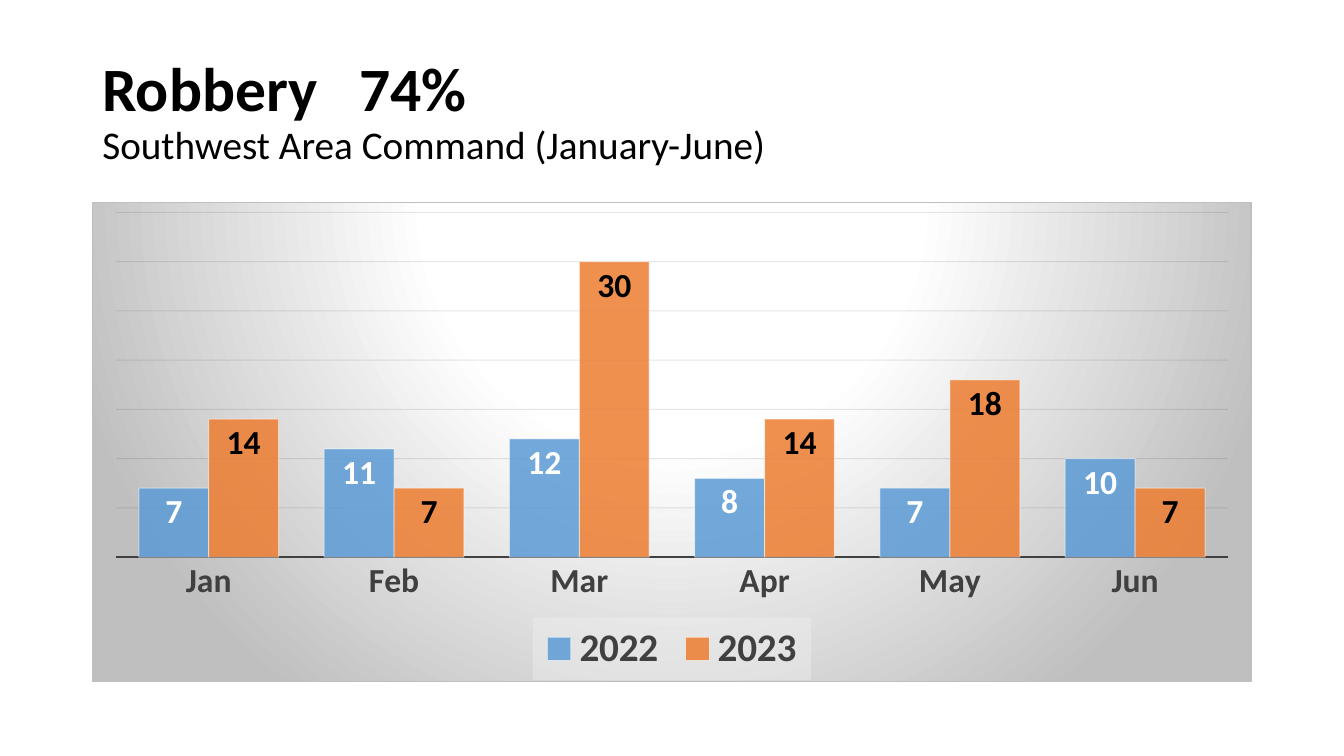
import pptx
import pptx.chart.data
import pptx.dml.color
import pptx.enum.chart
import pptx.enum.text
import pptx.oxml
import pptx.oxml.ns
import pptx.util
from pptx.util import Cm, Pt

TITLE = ("Robbery\t74%", 44, True)
SUBTITLE = ("Southwest Area Command (January-June)", 28, False)
MONTHS = ["Jan", "Feb", "Mar", "Apr", "May", "Jun"]
SERIES = [
    ("2022", [7, 11, 12, 8, 7, 10], "blue", "white"),
    ("2023", [14, 7, 30, 14, 18, 7], "orange", "black"),
]
COLORS = {
    "black": "000000", "white": "FFFFFF", "blue": "5B9BD5", "orange": "ED7D31",
    "text": "404040", "grid": "0D0D0D", "edge": "BFBFBF", "legend": "F2F2F2",
}
FONT = "Calibri"
LEFT, WIDTH = Cm(2.33), Cm(29.21)
TITLE_TOP, TITLE_HEIGHT = Cm(1.01), Cm(3.68)
CHART_TOP, CHART_HEIGHT = Cm(5.1), Cm(12.09)
TAB_STOP = Cm(6.47)
PLOT_BOX = (0.02, 0.02, 0.96, 0.72)
LEGEND_BOX = (0.38, 0.87, 0.24, 0.13)


def color(name):
    return pptx.dml.color.RGBColor.from_string(COLORS[name])


def style_font(font, size, bold, color_name):
    font.name, font.size, font.bold = FONT, Pt(size), bold
    font.color.rgb = color(color_name)


def style_line(line, color_name, width):
    line.color.rgb = color(color_name)
    line.width = Pt(width)


def set_alpha(properties, percent):
    for element in properties.iter(pptx.oxml.ns.qn("a:srgbClr")):
        pptx.oxml.ns.qn("a:alpha")
        element.append(xml(f'<a:alpha {{ns}} val="{percent * 1000}"/>'))


def xml(text):
    return pptx.oxml.parse_xml(text.replace("{ns}", pptx.oxml.ns.nsdecls("a", "c")))


def layout(box, inner=False):
    target = '<c:layoutTarget val="inner"/>' if inner else ""
    modes = "".join(f'<c:{axis}Mode val="edge"/>' for axis in "xy")
    sizes = "".join(f'<c:{key} val="{value}"/>' for key, value in zip("xywh", box))
    return xml(f"<c:layout {{ns}}><c:manualLayout>{target}{modes}{sizes}"
               "</c:manualLayout></c:layout>")


def remove_layout(parent):
    for element in parent.findall(pptx.oxml.ns.qn("c:layout")):
        parent.remove(element)


def add_title(slide):
    frame = slide.shapes.add_textbox(LEFT, TITLE_TOP, WIDTH, TITLE_HEIGHT).text_frame
    frame.word_wrap = True
    frame.vertical_anchor = pptx.enum.text.MSO_ANCHOR.MIDDLE
    paragraph = frame.paragraphs[0]
    paragraph.line_spacing = 0.9
    paragraph._p.get_or_add_pPr().append(
        xml(f'<a:tabLst {{ns}}><a:tab pos="{TAB_STOP}" algn="l"/></a:tabLst>'))
    for index, (text, size, bold) in enumerate((TITLE, SUBTITLE)):
        if index:
            paragraph.add_line_break()
        run = paragraph.add_run()
        run.text = text
        style_font(run.font, size, bold, "black")


def style_series(series, fill_name, label_name):
    series.format.fill.solid()
    series.format.fill.fore_color.rgb = color(fill_name)
    set_alpha(series.format.fill._xPr, 85)
    style_line(series.format.line, "white", 0.75)
    set_alpha(series.format.line._ln, 50)
    labels = series.data_labels
    labels.show_value = True
    labels.position = pptx.enum.chart.XL_LABEL_POSITION.INSIDE_END
    style_font(labels.font, 24, True, label_name)


def style_axes(chart):
    months, values = chart.category_axis, chart.value_axis
    months.major_tick_mark = pptx.enum.chart.XL_TICK_MARK.NONE
    style_font(months.tick_labels.font, 24, True, "text")
    style_line(months.format.line, "text", 1.5)
    values.minimum_scale, values.maximum_scale, values.major_unit = 0, 35, 5
    values.has_major_gridlines = True
    grid = values.major_gridlines.format.line
    style_line(grid, "grid", 0.75)
    set_alpha(grid._ln, 10)
    values.visible = False


def style_legend(chart):
    chart.has_legend = True
    legend = chart.legend
    legend.position = pptx.enum.chart.XL_LEGEND_POSITION.BOTTOM
    legend.include_in_layout = False
    style_font(legend.font, 28, True, "text")
    element = legend._element
    remove_layout(element)
    element.find(pptx.oxml.ns.qn("c:legendPos")).addnext(layout(LEGEND_BOX))
    element.find(pptx.oxml.ns.qn("c:overlay")).addnext(xml(
        f'<c:spPr {{ns}}><a:solidFill><a:srgbClr val="{COLORS["legend"]}">'
        '<a:alpha val="39000"/></a:srgbClr></a:solidFill></c:spPr>'))


def style_background(chart):
    stops = "".join(
        f'<a:gs pos="{position * 1000}"><a:srgbClr val="{COLORS[name]}"/></a:gs>'
        for position, name in ((0, "white"), (39, "white"), (100, "edge")))
    chart._chartSpace.chart.addnext(xml(
        f'<c:spPr {{ns}}><a:gradFill><a:gsLst>{stops}</a:gsLst><a:path path="circle">'
        '<a:fillToRect l="50000" t="-80000" r="50000" b="180000"/></a:path></a:gradFill>'
        f'<a:ln w="{Pt(0.75)}"><a:solidFill><a:srgbClr val="{COLORS["edge"]}"/>'
        '</a:solidFill></a:ln></c:spPr>'))


def add_robbery_chart(slide):
    data = pptx.chart.data.CategoryChartData()
    data.categories = MONTHS
    for name, values, *_ in SERIES:
        data.add_series(name, values)
    chart = slide.shapes.add_chart(
        pptx.enum.chart.XL_CHART_TYPE.COLUMN_CLUSTERED,
        LEFT, CHART_TOP, WIDTH, CHART_HEIGHT, data).chart
    style_font(chart.font, 10, False, "black")
    chart.has_title = False
    plot = chart.plots[0]
    plot.gap_width, plot.overlap, plot.vary_by_categories = 65, 0, False
    for series, (_, _, fill_name, label_name) in zip(plot.series, SERIES):
        style_series(series, fill_name, label_name)
    style_axes(chart)
    style_legend(chart)
    style_background(chart)
    plot_area = chart._chartSpace.chart.plotArea
    remove_layout(plot_area)
    plot_area.insert(0, layout(PLOT_BOX, inner=True))


def main():
    """Build the robbery slide with its monthly column chart."""
    presentation = pptx.Presentation()
    presentation.slide_width, presentation.slide_height = Cm(33.87), Cm(19.05)
    slide = presentation.slides.add_slide(presentation.slide_layouts[6])
    add_title(slide)
    add_robbery_chart(slide)
    presentation.save("out.pptx")


if __name__ == "__main__":
    main()
